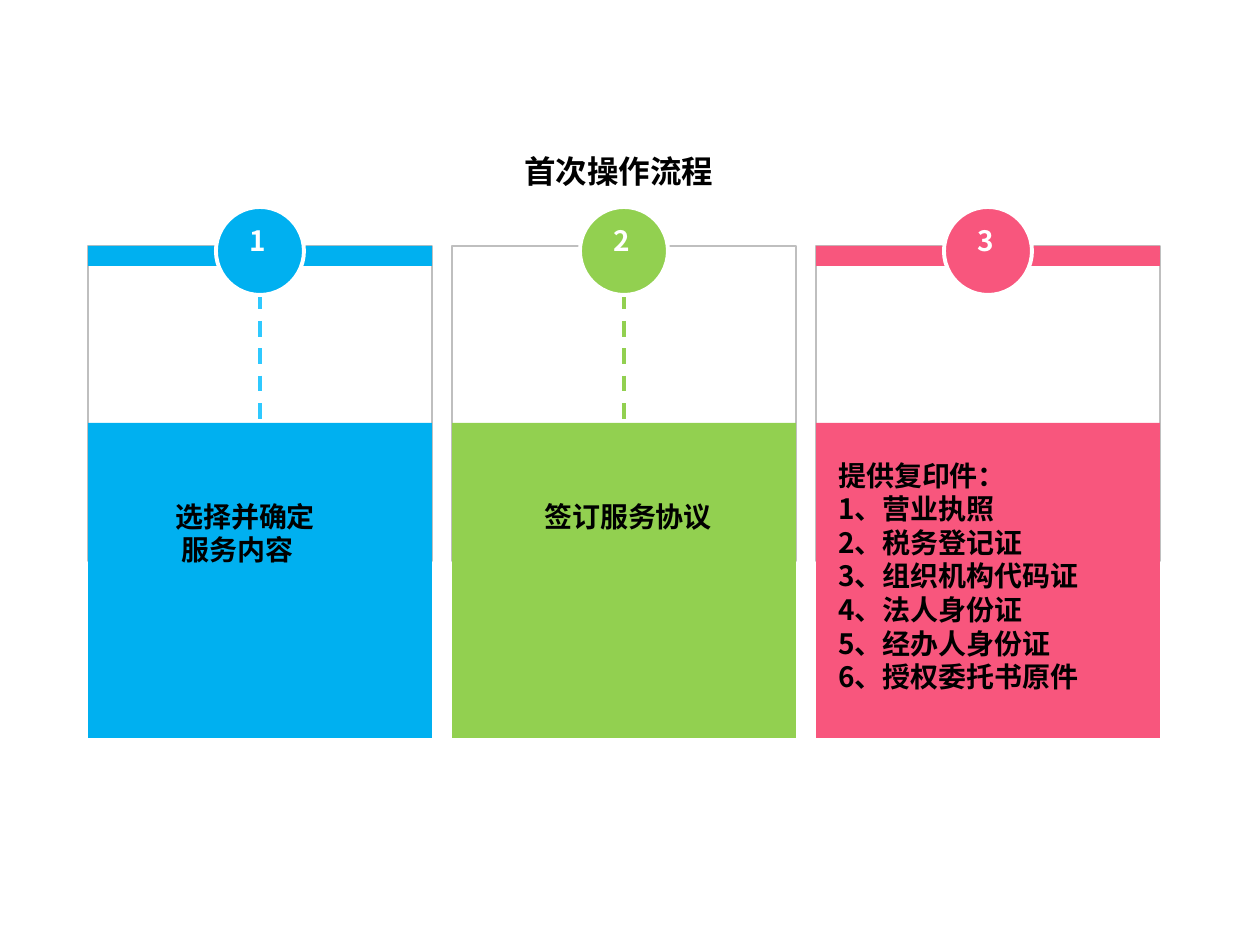
from collections import namedtuple

from lxml.etree import SubElement
from pptx import Presentation
from pptx.dml.color import RGBColor
from pptx.enum.dml import MSO_LINE
from pptx.enum.shapes import MSO_CONNECTOR, MSO_SHAPE
from pptx.oxml.ns import qn
from pptx.util import Pt

PX = 914400 / 126
FONT = "Noto Sans CJK SC"
BLACK = RGBColor(0x00, 0x00, 0x00)
WHITE = RGBColor(0xFF, 0xFF, 0xFF)
GREY = RGBColor(0xBF, 0xBF, 0xBF)
BLUE = RGBColor(0x00, 0xB0, 0xF0)
LIGHT_BLUE = RGBColor(0x2F, 0xC9, 0xFF)
GREEN = RGBColor(0x92, 0xD0, 0x50)
PINK = RGBColor(0xF8, 0x56, 0x7D)

Box = namedtuple("Box", "left top width height")
# caption_box is relative to the column; indents has one px value per line
Step = namedtuple("Step", "color bar dash lines indents caption_box")

FIRST_COLUMN = Box(88, 246, 344, 315)
COLUMN_PITCH = 364
BODY_OFFSET = 177
BAR_HEIGHT = 20
CIRCLE = 88

STEPS = [
    Step(BLUE, True, LIGHT_BLUE, ["选择并确定", "服务内容"], [6, 12],
         Box(69, 247, 246, 81)),
    Step(GREEN, False, GREEN, ["签订服务协议"], [0],
         Box(80, 247, 246, 81)),
    Step(PINK, True, None,
         ["提供复印件：", "1、营业执照", "2、税务登记证", "3、组织机构代码证",
          "4、法人身份证", "5、经办人身份证", "6、授权委托书原件"], [0] * 7,
         Box(10, 206, 325, 251)),
]


def emu(px):
    return round(px * PX)


def inside(box, left, top, width, height):
    """Turn a position relative to box into one on the slide."""
    return Box(box.left + left, box.top + top, width, height)


def add_text(slide, box, lines, size=16, color=BLACK, indents=None):
    frame = slide.shapes.add_textbox(*map(emu, box)).text_frame
    frame.word_wrap = True
    for index, line in enumerate(lines):
        para = frame.paragraphs[0] if index == 0 else frame.add_paragraph()
        if indents and indents[index]:
            para._p.get_or_add_pPr().set("marL", str(emu(indents[index])))
        span = para.add_run()
        span.text = line
        span.font.size = Pt(size)
        span.font.bold = True
        span.font.color.rgb = color
        span.font.name = FONT
        SubElement(span._r.get_or_add_rPr(), qn("a:ea"), typeface=FONT)


def add_block(slide, box, fill=None, line=None, weight=1.5, kind=MSO_SHAPE.RECTANGLE):
    shape = slide.shapes.add_shape(kind, *map(emu, box))
    shape.shadow.inherit = False
    if fill is None:
        shape.fill.background()
    else:
        shape.fill.solid()
        shape.fill.fore_color.rgb = fill
    if line is None:
        shape.line.fill.background()
    else:
        shape.line.color.rgb = line
        shape.line.width = Pt(weight)


def add_dashed_line(slide, x, top, bottom, color):
    line = slide.shapes.add_connector(
        MSO_CONNECTOR.STRAIGHT, emu(x), emu(top), emu(x), emu(bottom))
    line.line.color.rgb = color
    line.line.width = Pt(2.25)
    line.line.dash_style = MSO_LINE.DASH
    SubElement(line._element.spPr, qn("a:effectLst"))


def add_badge(slide, box, number, color):
    """Draw the numbered circle that sits on the top edge of a column."""
    add_block(slide, box, color, WHITE, 2.25, MSO_SHAPE.OVAL)
    add_text(slide, inside(box, 21, 10, 39, 47), [str(number)], color=WHITE)


def add_step(slide, box, number, step):
    middle = box.width // 2
    add_block(slide, box, line=GREY)
    add_block(slide, inside(box, 0, BODY_OFFSET, box.width, box.height), step.color)
    if step.bar:
        add_block(slide, inside(box, 0, 0, box.width, BAR_HEIGHT), step.color)
    if step.dash:
        add_dashed_line(slide, box.left + middle, box.top + BAR_HEIGHT,
                        box.top + BODY_OFFSET, step.dash)
    badge = inside(box, middle - CIRCLE // 2, -39, CIRCLE, CIRCLE)
    add_badge(slide, badge, number, step.color)
    add_text(slide, inside(box, *step.caption_box), step.lines, indents=step.indents)


def main():
    deck = Presentation()
    deck.slide_width, deck.slide_height = emu(1260), emu(945)
    page = deck.slides.add_slide(deck.slide_layouts[6])
    for index, step in enumerate(STEPS):
        column = FIRST_COLUMN._replace(left=FIRST_COLUMN.left + index * COLUMN_PITCH)
        add_step(page, column, index + 1, step)
    add_text(page, Box(512, 146, 413, 50), ["首次操作流程"], size=18)
    deck.save("out.pptx")


if __name__ == "__main__":
    main()
